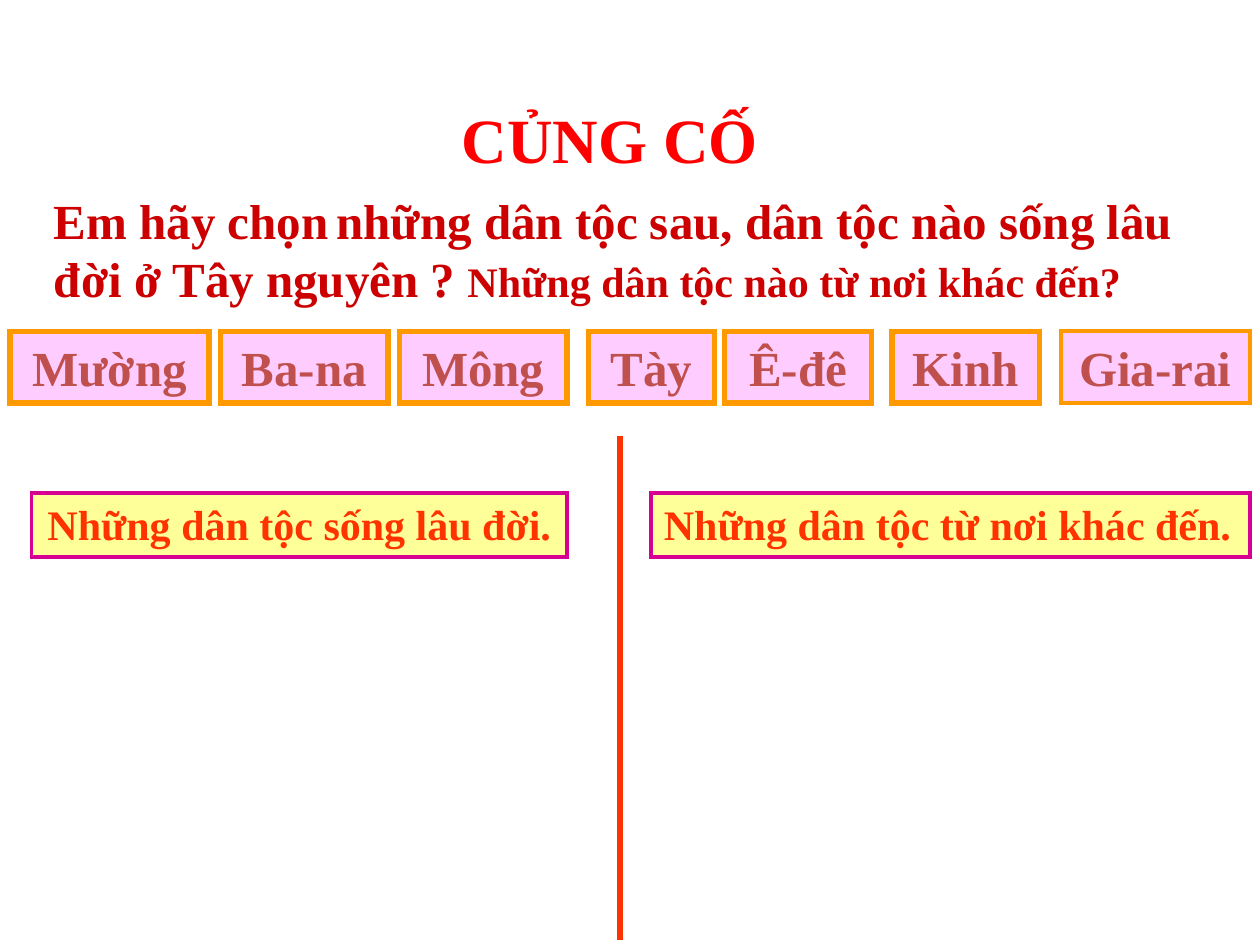
from pptx import Presentation
from pptx.dml.color import RGBColor
from pptx.enum.shapes import MSO_CONNECTOR, MSO_SHAPE
from pptx.enum.text import MSO_ANCHOR, MSO_AUTO_SIZE, PP_ALIGN
from pptx.oxml.ns import qn
from pptx.util import Inches, Pt
from lxml import etree

RECT = MSO_SHAPE.RECTANGLE
LINE = MSO_CONNECTOR.STRAIGHT
TOP = MSO_ANCHOR.TOP
FIXED = MSO_AUTO_SIZE.NONE
CENTER, LEFT = PP_ALIGN.CENTER, PP_ALIGN.LEFT


def rgb(value):
    return RGBColor.from_string(value)


def write(s, runs, color, align):
    tf = s.text_frame
    for name, value in {"word_wrap": True, "auto_size": FIXED, "vertical_anchor": TOP}.items():
        setattr(tf, name, value)
    p = tf.paragraphs[0]
    p.alignment = align
    for text, size, bold in runs:
        r = p.add_run()
        r.text = text
        for name, value in {"name": "Times New Roman", "size": Pt(size), "bold": bold}.items():
            setattr(r.font, name, value)
        r.font.color.rgb = rgb(color)


prs = Presentation()
prs.slide_width, prs.slide_height = Inches(10), Inches(7.5)
slide = prs.slides.add_slide(prs.slide_layouts[5])

title = slide.shapes.title
title.left, title.top = Inches(3.44), Inches(0.75)
title.width, title.height = Inches(2.8), Inches(0.65)
write(title, [("CỦNG CỐ", 36, True)], "FF0000", CENTER)

question = slide.shapes.add_textbox(Inches(0.33), Inches(1.46), Inches(9.5), Inches(1.03))
write(question, [
    ("Em hãy chọn", 28, True),
    (" ", 18, False),
    ("những dân tộc sau, dân tộc nào sống lâu đời ở Tây nguyên ? ", 28, True),
    ("Những dân tộc nào từ nơi khác đến?", 24, True),
], "CC0000", LEFT)

group_style = {"top": 2.63, "height": 0.57, "fill": "FFCCFF", "line": "FF9900", "color": "C0504D", "size": 28}
heading_style = {"top": 3.91, "height": 0.51, "fill": "FFFF99", "line": "D60093", "color": "FF3300", "size": 24}
boxes = [
    ("Mường", 0.08, 1.58, 3, CENTER, group_style),
    ("Ba-na", 1.75, 1.33, 3, CENTER, group_style),
    ("Mông", 3.17, 1.33, 3, CENTER, group_style),
    ("Tày", 4.67, 1, 3, CENTER, group_style),
    ("Ê-đê", 5.75, 1.17, 3, CENTER, group_style),
    ("Kinh", 7.08, 1.17, 3, CENTER, group_style),
    ("Gia-rai", 8.42, 1.5, 2.25, CENTER, group_style),
    ("Những dân tộc sống lâu đời.", 0.25, 4.25, 2.25, CENTER, heading_style),
    ("Những dân tộc từ nơi khác đến.", 5.17, 4.75, 2.25, LEFT, heading_style),
]
for text, left, width, border, align, style in boxes:
    s = slide.shapes.add_shape(RECT, Inches(left), Inches(style["top"]), Inches(width), Inches(style["height"]))
    s.shadow.inherit = False
    s.fill.solid()
    s.fill.fore_color.rgb = rgb(style["fill"])
    s.line.color.rgb = rgb(style["line"])
    s.line.width = Pt(border)
    etree.SubElement(s.element.spPr.find(qn("a:ln")), qn("a:miter"), lim="800000")
    write(s, [(text, style["size"], True)], style["color"], align)

divider = slide.shapes.add_connector(LINE, Inches(4.92), Inches(3.46), Inches(4.92), Inches(7.46))
divider.line.color.rgb = rgb("FF3300")
divider.line.width = Pt(3)
etree.SubElement(divider.element.spPr, qn("a:effectLst"))

prs.save("out.pptx")
